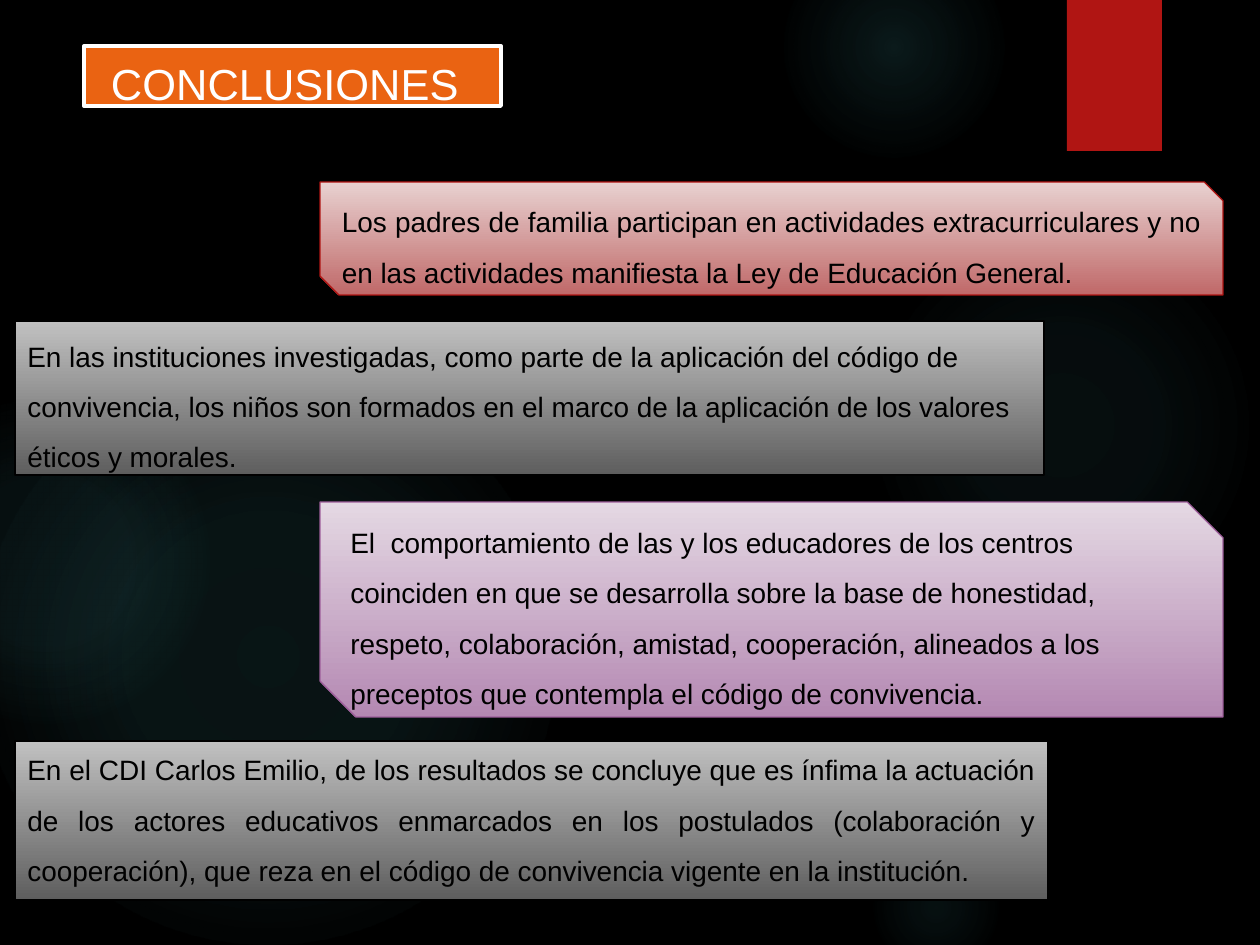
"""Build the conclusions slide: glowing dark backdrop, title and four statement boxes."""
from lxml import etree
from pptx import Presentation
from pptx.dml.color import RGBColor
from pptx.enum.shapes import MSO_SHAPE
from pptx.enum.text import MSO_ANCHOR, MSO_AUTO_SIZE, PP_ALIGN
from pptx.oxml.ns import nsdecls, qn
from pptx.util import Emu, Pt

RECTANGLE, ELLIPSE = MSO_SHAPE.RECTANGLE, MSO_SHAPE.OVAL
SNIPPED = MSO_SHAPE.SNIP_2_DIAG_RECTANGLE
LEFT, JUSTIFY = PP_ALIGN.LEFT, PP_ALIGN.JUSTIFY
TOP, MIDDLE = MSO_ANCHOR.TOP, MSO_ANCHOR.MIDDLE
NO_AUTOFIT = MSO_AUTO_SIZE.NONE

BLACK = RGBColor(0x00, 0x00, 0x00)
WHITE = RGBColor(0xFF, 0xFF, 0xFF)
GLOW = RGBColor(0x50, 0xB9, 0xC1)
RED = RGBColor(0xB0, 0x15, 0x13)
ORANGE = RGBColor(0xEA, 0x63, 0x12)
PURPLE = RGBColor(0x9E, 0x5E, 0x9B)
GRAY_LIGHT, GRAY_DARK = RGBColor(0xC1, 0xC1, 0xC1), RGBColor(0x5E, 0x5E, 0x5E)
PURPLE_LIGHT, PURPLE_DARK = RGBColor(0xE4, 0xD8, 0xE3), RGBColor(0xB4, 0x88, 0xB2)
RED_LIGHT, RED_DARK = RGBColor(0xE8, 0xD1, 0xD0), RGBColor(0xC0, 0x69, 0x69)

SCALE = 914400 / 126
FONT = "Arial"


def px(length):
    return Emu(round(length * SCALE))


def write_text(shape, text, size, color, alignment):
    shape.text_frame.word_wrap = True
    shape.text_frame.auto_size = NO_AUTOFIT
    paragraph = shape.text_frame.paragraphs[0]
    paragraph.alignment = alignment
    run = paragraph.add_run()
    run.text = text
    run.font.name = FONT
    run.font.size = Pt(size)
    run.font.color.rgb = color
    return paragraph


presentation = Presentation()
presentation.slide_width, presentation.slide_height = px(1260), px(945)
slide = presentation.slides.add_slide(presentation.slide_layouts[5])
slide.background.fill.solid()
slide.background.fill.fore_color.rgb = BLACK

glows = [
    (868, 231, 388, [(0, 7), (36, 6), (69, 0)]),
    (784, -63, 220, [(0, 14), (36, 7), (73, 0)]),
    (868, 840, 136, [(0, 9), (36, 5), (66, 0)]),
    (-21, 368, 577, [(0, 11), (36, 10), (75, 0)]),
    (-116, 399, 325, [(0, 8), (36, 8), (72, 0)]),
]
for left, top, diameter, stops in glows:
    glow = slide.shapes.add_shape(ELLIPSE, px(left), px(top), px(diameter), px(diameter))
    glow.shadow.inherit = False
    glow.line.fill.background()
    glow.fill.background()
    stop_xml = "".join(
        f'<a:gs pos="{position * 1000}"><a:srgbClr val="{GLOW}">'
        f'<a:alpha val="{alpha * 1000}"/></a:srgbClr></a:gs>'
        for position, alpha in stops
    )
    gradient = etree.fromstring(
        f'<a:gradFill {nsdecls("a")}><a:gsLst>{stop_xml}</a:gsLst><a:path path="circle">'
        '<a:fillToRect l="50000" t="50000" r="50000" b="50000"/></a:path></a:gradFill>'
    )
    properties = glow._element.spPr
    properties.replace(properties.find(qn("a:noFill")), gradient)

ribbon = slide.shapes.add_shape(RECTANGLE, px(1067), px(0), px(95), px(151))
ribbon.shadow.inherit = False
ribbon.fill.solid()
ribbon.fill.fore_color.rgb = RED
ribbon.line.fill.background()

title = slide.shapes.title
title.left, title.top, title.width, title.height = px(84), px(46), px(417), px(60)
title.fill.solid()
title.fill.fore_color.rgb = ORANGE
title.line.color.rgb = WHITE
title.line.width = Pt(2.25)
title.text_frame.vertical_anchor = TOP
title.text_frame.margin_left = px(27)
title.text_frame.margin_top = px(11)
write_text(title, "CONCLUSIONES", 24.8, WHITE, JUSTIFY)

conclusions = [
    (SNIPPED, 320, 182, 903, 113, RED_LIGHT, RED_DARK, RED, JUSTIFY, 6,
     "Los padres de familia participan en actividades extracurriculares y no en las "
     "actividades manifiesta la Ley de Educación General."),
    (RECTANGLE, 15, 321, 1029, 154, GRAY_LIGHT, GRAY_DARK, BLACK, LEFT, 6,
     "En las instituciones investigadas, como parte de la aplicación del código de "
     "convivencia, los niños son formados en el marco de la aplicación de los valores "
     "éticos y morales."),
    (SNIPPED, 320, 502, 903, 215, PURPLE_LIGHT, PURPLE_DARK, PURPLE, LEFT, 6,
     "El  comportamiento de las y los educadores de los centros coinciden en que se "
     "desarrolla sobre la base de honestidad, respeto, colaboración, amistad, "
     "cooperación, alineados a los preceptos que contempla el código de convivencia."),
    (RECTANGLE, 15, 741, 1033, 159, GRAY_LIGHT, GRAY_DARK, BLACK, JUSTIFY, 24,
     "En el CDI Carlos Emilio, de los resultados se concluye que es ínfima la actuación "
     "de los actores educativos enmarcados en los postulados (colaboración y "
     "cooperación), que reza en el código de convivencia vigente en la institución."),
]
for outline, left, top, width, height, light, dark, edge, alignment, bottom, text in conclusions:
    box = slide.shapes.add_shape(outline, px(left), px(top), px(width), px(height))
    box.shadow.inherit = False
    box.fill.gradient()
    box.fill.gradient_angle = 270
    for stop, color in zip(box.fill.gradient_stops, (light, dark)):
        stop.color.rgb = color
    box.line.color.rgb = edge
    box.line.width = Pt(0.75)
    box.text_frame.vertical_anchor = MIDDLE
    box.text_frame.margin_bottom = px(bottom)
    write_text(box, text, 16, BLACK, alignment).line_spacing = 1.5

presentation.save("out.pptx")
